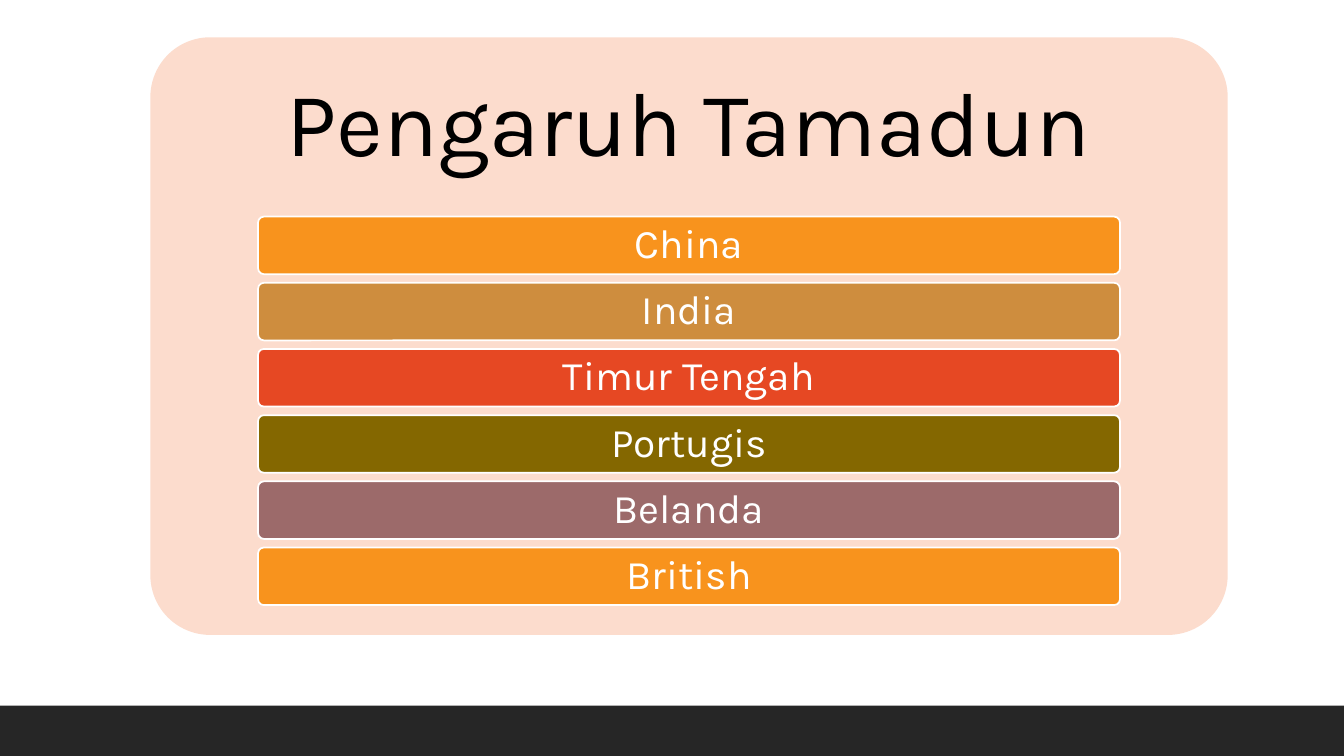
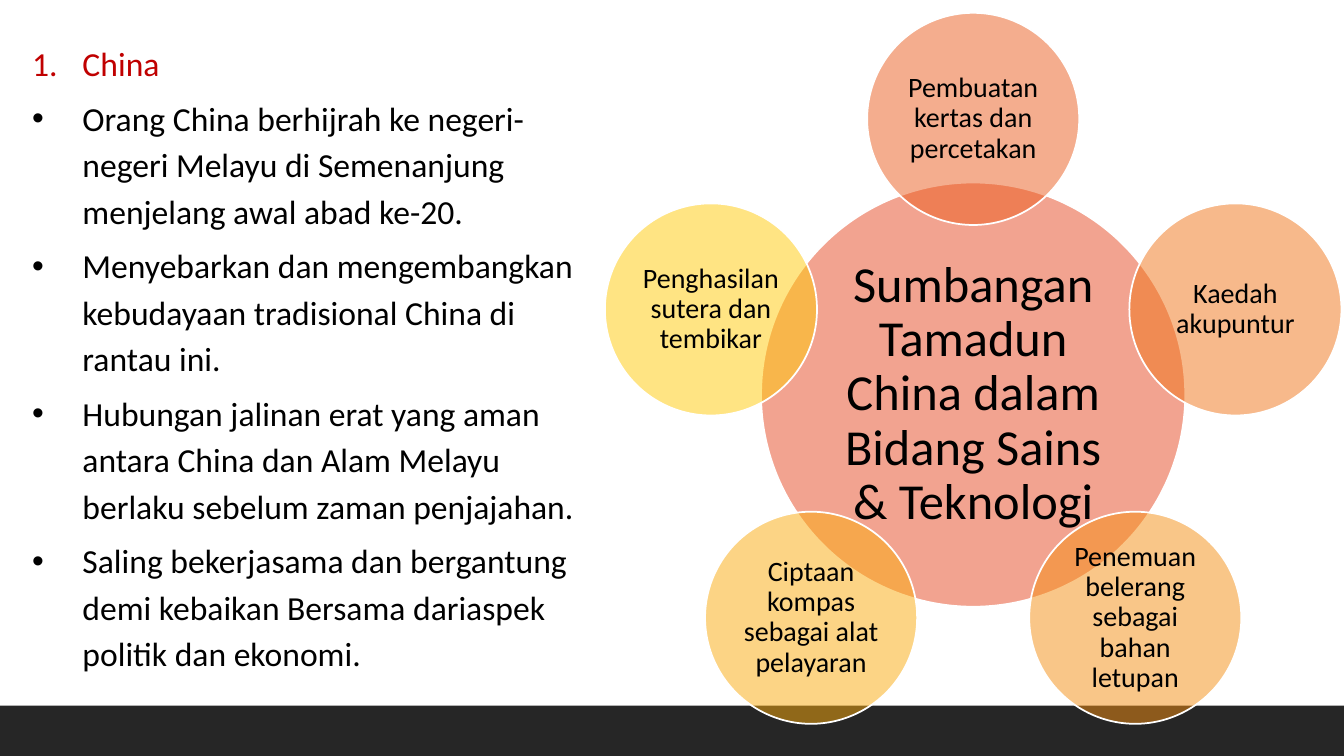
from math import cos, radians, sin, sqrt

from lxml.etree import SubElement
from pptx import Presentation
from pptx.dml.color import RGBColor
from pptx.enum.shapes import MSO_SHAPE
from pptx.enum.text import MSO_ANCHOR, MSO_AUTO_SIZE, PP_ALIGN
from pptx.oxml.ns import qn
from pptx.util import Cm, Pt

HUES = {
    "white": "FFFFFF", "black": "000000", "band": "262626", "panel": "FCDCCD",
    "orange": "F8931D", "tan": "CE8D3E", "red": "E64823", "olive": "846700",
    "mauve": "9C6A6A", "coral": "EB5D1E", "rust": "F07518", "amber": "F58F13",
    "gold": "FAAB0D", "yellow": "FFCA08", "crimson": "C00000",
}
WIDTH, HEIGHT = 33.87, 19.05
BARS = [("China", "orange"), ("India", "tan"), ("Timur Tengah", "red"),
        ("Portugis", "olive"), ("Belanda", "mauve"), ("British", "orange")]
GIFTS = [("Pembuatan kertas dan percetakan", "coral"),
         ("Kaedah akupuntur", "rust"),
         ("Penemuan belerang sebagai bahan letupan", "amber"),
         ("Ciptaan kompas sebagai alat pelayaran", "gold"),
         ("Penghasilan sutera dan tembikar", "yellow")]
POINTS = [
    "Orang China berhijrah ke negeri-negeri Melayu di Semenanjung menjelang awal abad ke-20.",
    "Menyebarkan dan mengembangkan kebudayaan tradisional China di rantau ini.",
    "Hubungan jalinan erat yang aman antara China dan Alam Melayu berlaku sebelum zaman penjajahan.",
    "Saling bekerjasama dan bergantung demi kebaikan Bersama dariaspek politik dan ekonomi.",
]


def tint(name):
    """Return the named colour."""
    return RGBColor.from_string(HUES[name])


def write(par, text, size=20, font="Calibri", hue="black", align=PP_ALIGN.CENTER, lead=0.9, after=0):
    """Put formatted text into a paragraph."""
    par.alignment, par.line_spacing, par.space_after = align, lead, Pt(after)
    run = par.add_run()
    run.text = text
    run.font.size, run.font.name = Pt(size), font
    run.font.color.rgb = tint(hue)


def fit(shape, pad):
    """Wrap and centre the text of a shape inside even margins."""
    frame = shape.text_frame
    frame.word_wrap, frame.auto_size = True, MSO_AUTO_SIZE.NONE
    frame.vertical_anchor = MSO_ANCHOR.MIDDLE
    frame.margin_left = frame.margin_right = Cm(pad)
    frame.margin_top = frame.margin_bottom = Cm(pad)
    return frame.paragraphs[0]


def draw(slide, kind, box, fill, edge=None, alpha=None):
    """Draw a flat preset shape."""
    shape = slide.shapes.add_shape(kind, *map(Cm, box))
    shape.shadow.inherit = False
    shape.fill.solid()
    shape.fill.fore_color.rgb = tint(fill)
    if alpha:
        color = shape.fill._xPr.find(".//" + qn("a:srgbClr"))
        SubElement(color, qn("a:alpha"), val=str(alpha * 1000))
    if edge:
        shape.line.color.rgb = tint(edge)
        shape.line.width = Pt(1.25)
    else:
        shape.line.fill.background()
    return shape


def round_box(slide, box, fill, edge=None):
    """Draw a rounded box with the shared corner ratio."""
    shape = draw(slide, MSO_SHAPE.ROUNDED_RECTANGLE, box, fill, edge)
    shape.adjustments[0] = 0.1
    return shape


def disc(slide, x, y, size, fill):
    """Draw a translucent circle around a centre."""
    box = (x - size / 2, y - size / 2, size, size)
    return draw(slide, MSO_SHAPE.OVAL, box, fill, "white", 50)


def head(slide, text, box, pad, **style):
    """Place the title placeholder above the shapes drawn so far."""
    title = slide.shapes.title
    title.left, title.top, title.width, title.height = map(Cm, box)
    write(fit(title, pad), text, **style)
    slide.shapes._spTree.append(title._element)


def footer(slide, layout):
    """Draw the dark bottom band and hand it to the layout."""
    band = draw(slide, MSO_SHAPE.RECTANGLE, (0, 17.78, WIDTH, HEIGHT - 17.78), "band")
    layout.shapes._spTree.insert(2, band._element)


def panel(slide, box):
    """Fill a box with a heading and a stack of equal bars."""
    left, top, width, height = box
    round_box(slide, box, "panel")
    head(slide, "Pengaruh Tamadun", (left, top, width, height * 0.3), 0.69, size=65, font="Karla")
    pitch = height * 0.65 / (len(BARS) - 0.13)
    for i, (name, hue) in enumerate(BARS):
        place = (left + width * 0.1, top + height * 0.3 + i * pitch, width * 0.8, pitch * 0.87)
        bar = round_box(slide, place, hue, "white")
        write(fit(bar, 0.15), name, size=29, font="Karla", hue="white")


def wheel(slide, box):
    """Set a hub in a square box and circles evenly around it."""
    left, top, size = box
    x, y = left + size / 2, top + size / 2
    disc(slide, x, y, size, "red")
    side = size / sqrt(2)
    head(slide, "Sumbangan Tamadun China dalam Bidang Sains & Teknologi",
         (x - side / 2, y - side / 2, side, side), 0.13, size=36)
    for i, (text, hue) in enumerate(GIFTS):
        turn = radians(360 / len(GIFTS) * i)
        gift = disc(slide, x + size * 0.65 * sin(turn), y - size * 0.65 * cos(turn), size / 2, hue)
        write(fit(gift, 0.08), text)


def notes(slide, box):
    """List a numbered heading and its bullet points in a box."""
    frame = slide.shapes.add_textbox(*map(Cm, box)).text_frame
    frame.word_wrap = True
    for i, text in enumerate(["China", *POINTS]):
        par = frame.add_paragraph() if i else frame.paragraphs[0]
        write(par, text, size=24, hue="black" if i else "crimson",
              align=PP_ALIGN.LEFT, lead=1.15, after=6)
        props = par._p.get_or_add_pPr()
        props.set("marL", str(Cm(1.27)))
        props.set("indent", str(-Cm(1.27)))
        if i:
            SubElement(props, qn("a:buFont"), typeface="Arial")
            SubElement(props, qn("a:buChar"), char="•")
        else:
            SubElement(props, qn("a:buFont"), typeface="+mj-lt")
            SubElement(props, qn("a:buAutoNum"), type="arabicPeriod")


def main():
    """Build and save both slides."""
    deck = Presentation()
    deck.slide_width, deck.slide_height = Cm(WIDTH), Cm(HEIGHT)
    layout = deck.slide_layouts[5]
    first, second = (deck.slides.add_slide(layout) for _ in range(2))
    footer(first, layout)
    panel(first, (3.79, 0.94, 27.15, 15.06))
    wheel(second, (19.18, 4.6, 10.69))
    notes(second, (0.56, 0.81, 14.2, 17.78))
    deck.save("out.pptx")


if __name__ == "__main__":
    main()
